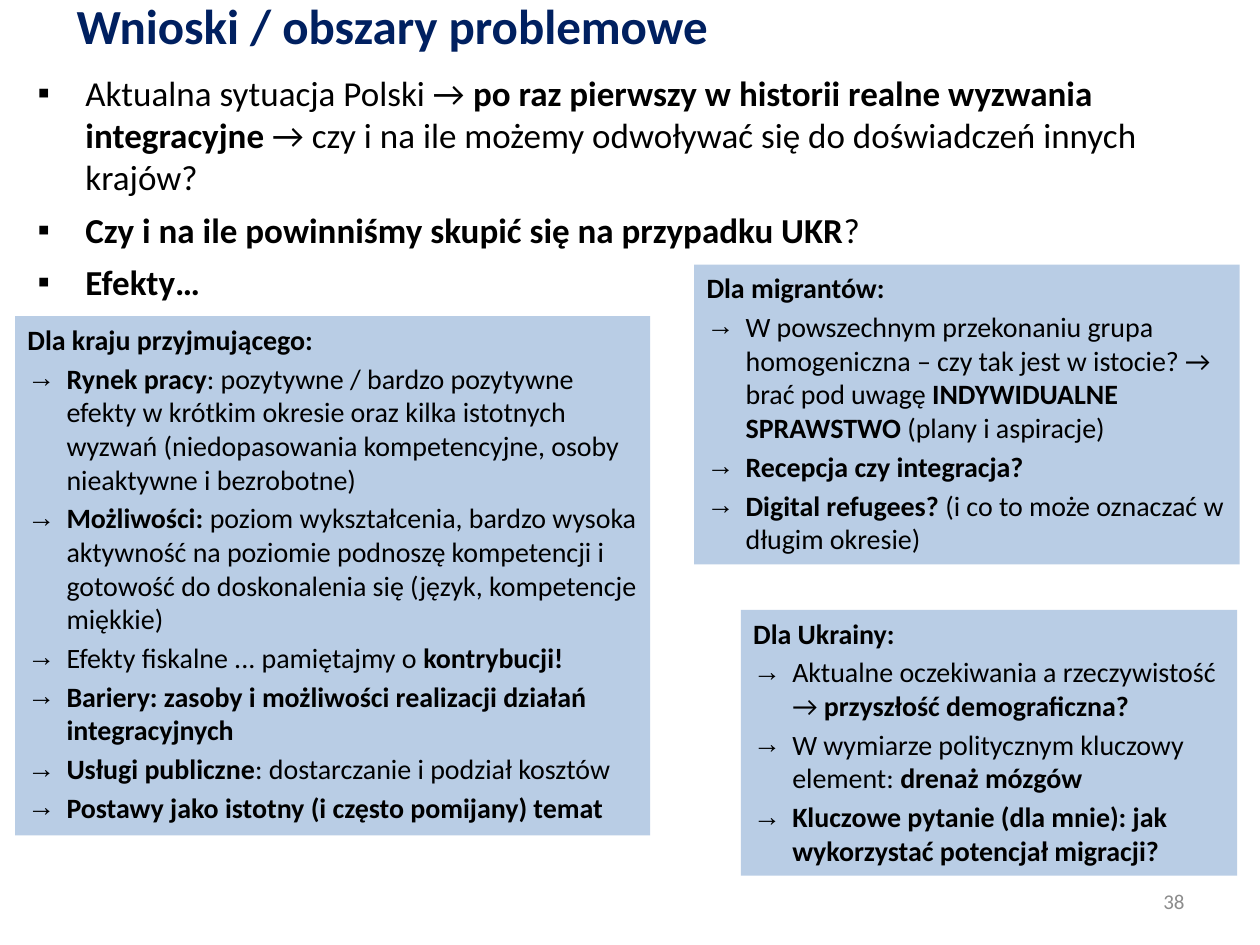
"""Build the slide of conclusions and problem areas."""
from dataclasses import dataclass

from lxml import etree
from pptx import Presentation
from pptx.dml.color import RGBColor
from pptx.enum.shapes import MSO_SHAPE
from pptx.enum.text import MSO_ANCHOR, MSO_AUTO_SIZE, PP_ALIGN
from pptx.oxml.ns import qn
from pptx.util import Inches, Pt

RECT = MSO_SHAPE.RECTANGLE
TOP, MIDDLE = MSO_ANCHOR.TOP, MSO_ANCHOR.MIDDLE
LEFT, RIGHT = PP_ALIGN.LEFT, PP_ALIGN.RIGHT
GROW = MSO_AUTO_SIZE.SHAPE_TO_FIT_TEXT
FONT = "Calibri"
BLACK, NAVY, GREY, BLUE = "000000", "002060", "8C8C8C", "B9CDE5"


@dataclass
class Style:
    """Look of the paragraphs in a box."""
    size: int
    color: str = BLACK
    bullet: str = ""
    indent: float = 0
    gap: int = 0
    align: PP_ALIGN = LEFT


@dataclass
class Panel:
    """Filled box with a heading and arrow points."""
    left: float
    top: float
    width: float
    height: float
    head: str
    points: list[str]


TITLE = Style(28, NAVY)
NUMBER = Style(12, GREY, align=RIGHT)
BODY = Style(20, bullet="▪", indent=0.38, gap=6)
HEAD = Style(16)
POINT = Style(16, bullet="→", indent=0.31, gap=3)

THESES = [
    "Aktualna sytuacja Polski → **po raz pierwszy w historii realne wyzwania integracyjne **"
    "→ czy i na ile możemy odwoływać się do doświadczeń innych krajów?",
    "**Czy i na ile powinniśmy skupić się na przypadku UKR**?",
    "**Efekty…**",
]
PANELS = [
    Panel(0.12, 2.51, 5.04, 4.12, "**Dla kraju przyjmującego:**", [
        "**Rynek pracy**: pozytywne / bardzo pozytywne efekty w krótkim okresie oraz kilka "
        "istotnych wyzwań (niedopasowania kompetencyjne, osoby nieaktywne i bezrobotne)",
        "**Możliwości: **poziom wykształcenia, bardzo wysoka aktywność na poziomie podnoszę "
        "kompetencji i gotowość do doskonalenia się (język, kompetencje miękkie)",
        "Efekty fiskalne ... pamiętajmy o **kontrybucji!**",
        "**Bariery: zasoby i możliwości realizacji działań integracyjnych**",
        "**Usługi publiczne**: dostarczanie i podział kosztów",
        "**Postawy jako istotny (i często pomijany) temat**",
    ]),
    Panel(5.51, 2.1, 4.33, 2.38, "**Dla migrantów:**", [
        "W powszechnym przekonaniu grupa homogeniczna – czy tak jest w istocie? → "
        "brać pod uwagę **INDYWIDUALNE SPRAWSTWO **(plany i aspiracje)",
        "**Recepcja czy integracja?**",
        "**Digital refugees? **(i co to może oznaczać w długim okresie)",
    ]),
    Panel(5.88, 4.84, 3.94, 2.11, "**Dla Ukrainy:**", [
        "Aktualne oczekiwania a rzeczywistość → **przyszłość demograficzna?**",
        "W wymiarze politycznym kluczowy element: **drenaż mózgów**",
        "**Kluczowe pytanie (dla mnie): jak wykorzystać potencjał migracji?**",
    ]),
]


def rgb(code: str) -> RGBColor:
    """Turn a hex string into a colour."""
    return RGBColor.from_string(code)


def write(frame, lines: list[tuple[str, Style]]) -> None:
    """Fill a text frame, with bold parts between double asterisks."""
    for i, (text, style) in enumerate(lines):
        para = frame.add_paragraph() if i else frame.paragraphs[0]
        para.alignment = style.align
        para.space_before = Pt(style.gap if i else 0)
        if style.bullet:
            props = para._p.get_or_add_pPr()
            props.set("marL", str(Inches(style.indent)))
            props.set("indent", str(-Inches(style.indent)))
            etree.SubElement(props, qn("a:buFont")).set("typeface", "Arial")
            etree.SubElement(props, qn("a:buChar")).set("char", style.bullet)
        font = para.font
        font.name, font.size = FONT, Pt(style.size)
        font.color.rgb = rgb(style.color)
        parts = [(part, n % 2 == 1) for n, part in enumerate(text.split("**")) if part]
        if len(parts) == 1:
            font.bold = parts[0][1]
        for part, bold in parts:
            run = para.add_run()
            run.text = part
            if len(parts) > 1:
                run.font.bold = bold


def label(slide, left: float, top: float, width: float, height: float,
          lines: list[tuple[str, Style]], anchor: MSO_ANCHOR = MIDDLE) -> None:
    """Add a wrapping text box."""
    box = slide.shapes.add_textbox(Inches(left), Inches(top), Inches(width), Inches(height))
    frame = box.text_frame
    frame.word_wrap = True
    frame.vertical_anchor = anchor
    write(frame, lines)


def draw(slide, panel: Panel) -> None:
    """Add a filled panel."""
    shape = slide.shapes.add_shape(RECT, Inches(panel.left), Inches(panel.top),
                                   Inches(panel.width), Inches(panel.height))
    shape.shadow.inherit = False
    shape.fill.solid()
    shape.fill.fore_color.rgb = rgb(BLUE)
    shape.line.fill.background()
    frame = shape.text_frame
    frame.word_wrap = True
    frame.auto_size = GROW
    frame.vertical_anchor = TOP
    write(frame, [(panel.head, HEAD)] + [(point, POINT) for point in panel.points])


def main() -> None:
    """Build and save the deck."""
    deck = Presentation()
    deck.slide_width, deck.slide_height = Inches(10), Inches(7.5)
    slide = deck.slides.add_slide(deck.slide_layouts[6])
    label(slide, 0.51, -0.03, 8.74, 0.46, [("**Wnioski / obszary problemowe**", TITLE)])
    label(slide, 7.17, 6.95, 2.33, 0.4, [("38", NUMBER)])
    label(slide, 0.2, 0.52, 9.61, 6.54, [(text, BODY) for text in THESES], TOP)
    for panel in PANELS:
        draw(slide, panel)
    deck.save("out.pptx")


if __name__ == "__main__":
    main()
